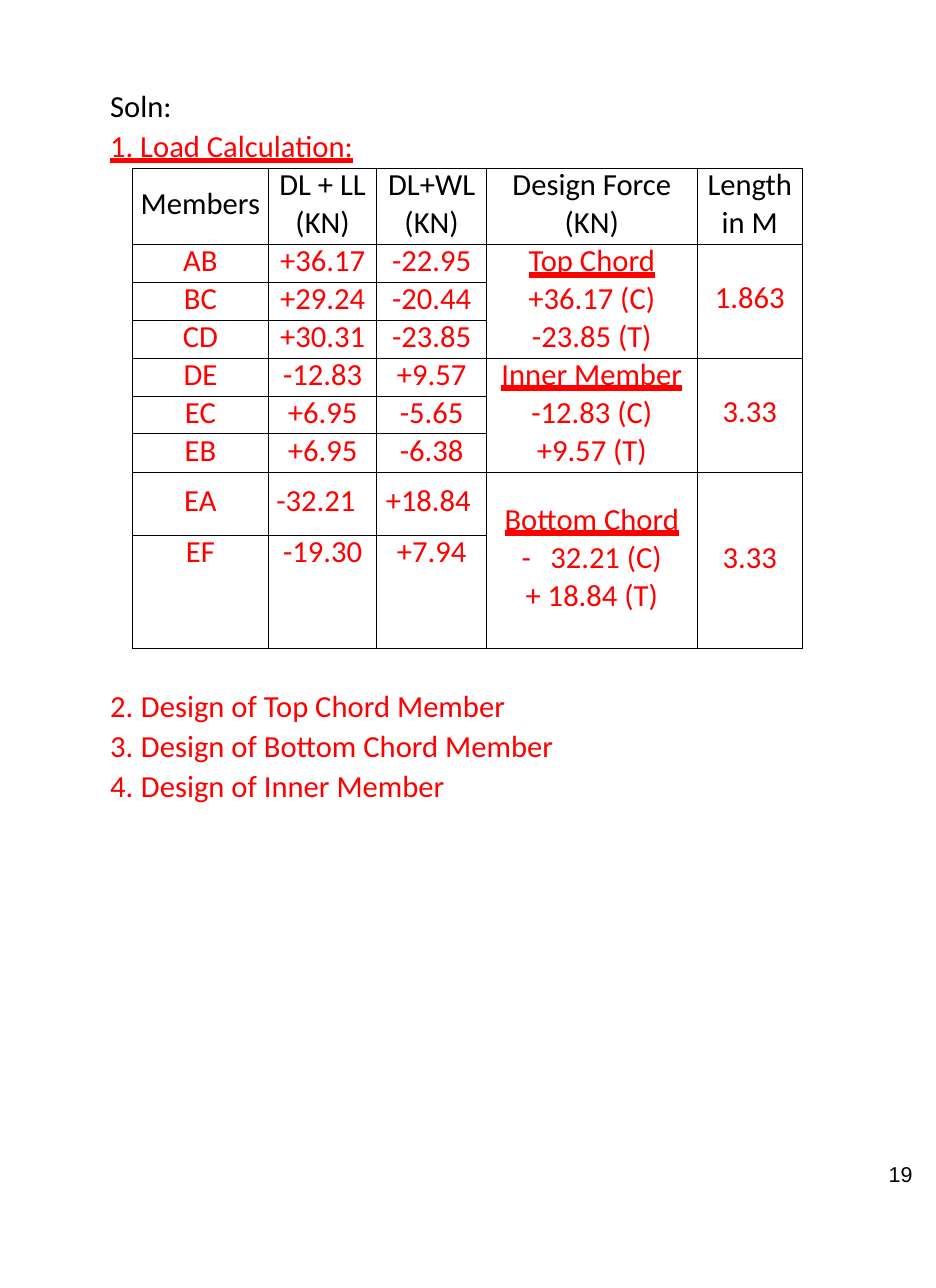
from lxml import etree
from pptx import Presentation
from pptx.dml.color import RGBColor
from pptx.enum.text import MSO_ANCHOR, MSO_AUTO_SIZE, MSO_UNDERLINE, PP_ALIGN
from pptx.oxml.ns import qn
from pptx.util import Inches, Pt

BLACK = RGBColor(0, 0, 0)
RED = RGBColor(255, 0, 0)
HEAVY = MSO_UNDERLINE.HEAVY_LINE
LEFT, CENTER = PP_ALIGN.LEFT, PP_ALIGN.CENTER
TOP, MIDDLE = MSO_ANCHOR.TOP, MSO_ANCHOR.MIDDLE
NO_AUTOFIT = MSO_AUTO_SIZE.NONE

SOLUTION = "Soln:"
LOAD_HEADING = "1. Load Calculation:"
DESIGN_STEPS = [
    "Design of Top Chord Member",
    "Design of Bottom Chord Member",
    "Design of Inner Member",
]
FIRST_STEP = 2
PAGE_NUMBER = "19"

HEADERS = [["Members"], ["DL + LL", "(KN)"], ["DL+WL", "(KN)"],
           ["Design Force", "(KN)"], ["Length", "in M"]]
MEMBERS = [
    ("AB", "+36.17", "-22.95"),
    ("BC", "+29.24", "-20.44"),
    ("CD", "+30.31", "-23.85"),
    ("DE", "-12.83", "+9.57"),
    ("EC", "+6.95", "-5.65"),
    ("EB", "+6.95", "-6.38"),
    ("EA", "-32.21", "+18.84"),
    ("EF", "-19.30", "+7.94"),
]
# first row, last row, design force lines, length, anchor of the forces
GROUPS = [
    (1, 3, ["Top Chord", "+36.17 (C)", "-23.85 (T)"], "1.863", TOP),
    (4, 6, ["Inner Member", "-12.83 (C)", "+9.57 (T)"], "3.33", TOP),
    (7, 8, ["Bottom Chord", "-\t32.21 (C)", "+ 18.84 (T)"], "3.33", MIDDLE),
]
COLUMN_WIDTHS = [1.24, 0.98, 1, 1.91, 0.96]
ROW_HEIGHTS = [0.69, 0.34, 0.35, 0.34, 0.35, 0.34, 0.35, 0.57, 1.03]
EA_ROW = 7


def add_span(para, text, color, size=20, font="Calibri", underline=None):
    span = para.add_run()
    span.text = text
    span.font.name = font
    span.font.size = Pt(size)
    span.font.bold = False
    span.font.color.rgb = color
    span.font.underline = underline


def next_para(frame, index):
    return frame.paragraphs[0] if index == 0 else frame.add_paragraph()


def place(shape, left, top, width, height, inset_top=0.0):
    shape.left, shape.top = Inches(left), Inches(top)
    shape.width, shape.height = Inches(width), Inches(height)
    frame = shape.text_frame
    frame.margin_left = frame.margin_right = frame.margin_bottom = 0
    frame.margin_top = Inches(inset_top)
    frame.vertical_anchor = TOP
    frame.auto_size = NO_AUTOFIT
    frame.word_wrap = True
    return frame


def add_tab_stop(para, inches):
    tabs = etree.SubElement(para._p.get_or_add_pPr(), qn("a:tabLst"))
    etree.SubElement(tabs, qn("a:tab"), pos=str(Inches(inches)), algn="l")


def number_para(para, start):
    props = para._p.get_or_add_pPr()
    props.set("marL", str(Inches(0.29)))
    props.set("indent", str(Inches(-0.28)))
    etree.SubElement(props, qn("a:buAutoNum"), type="arabicPeriod",
                     startAt=str(start))


def style_cell(cell):
    """Clear the fill and insets and draw thin black borders."""
    cell.margin_left = cell.margin_right = 0
    cell.margin_top = cell.margin_bottom = 0
    props = cell._tc.get_or_add_tcPr()
    for side in ("lnL", "lnR", "lnT", "lnB"):
        line = etree.SubElement(props, qn("a:" + side), w=str(Pt(0.5)))
        fill = etree.SubElement(line, qn("a:solidFill"))
        etree.SubElement(fill, qn("a:srgbClr"), val=str(BLACK))
    cell.fill.background()


def fill_cell(cell, lines, color, anchor, underline_first=False):
    cell.vertical_anchor = anchor
    if anchor == MIDDLE:
        cell.margin_bottom = Inches(0.05)
    for index, text in enumerate(lines):
        para = next_para(cell.text_frame, index)
        if "\t" in text:
            add_tab_stop(para, 0.26)
        para.alignment = CENTER
        if index:
            para.space_before = Pt(0.4)
        elif anchor == TOP:
            para.line_spacing = Pt(23.2)
        underline = HEAVY if underline_first and index == 0 else None
        add_span(para, text, color, underline=underline)


def add_load_table(page):
    frame = page.shapes.add_table(
        len(ROW_HEIGHTS), len(COLUMN_WIDTHS), Inches(1.2), Inches(1.53),
        Inches(sum(COLUMN_WIDTHS)), Inches(sum(ROW_HEIGHTS)))
    table = frame.table
    table.first_row = table.horz_banding = False
    for column, width in zip(table.columns, COLUMN_WIDTHS):
        column.width = Inches(width)
    for row, height in zip(table.rows, ROW_HEIGHTS):
        row.height = Inches(height)
    for cell in table.iter_cells():
        style_cell(cell)

    for column, lines in enumerate(HEADERS):
        anchor = MIDDLE if len(lines) == 1 else TOP
        fill_cell(table.cell(0, column), lines, BLACK, anchor)
    for row, values in enumerate(MEMBERS, start=1):
        anchor = MIDDLE if row == EA_ROW else TOP
        for column, value in enumerate(values):
            fill_cell(table.cell(row, column), [value], RED, anchor)
    shifted = table.cell(EA_ROW, 1)
    shifted.margin_left = Inches(0.07)
    shifted.text_frame.paragraphs[0].alignment = LEFT
    table.cell(EA_ROW, 2).margin_right = Inches(0.06)

    for first, last, forces, length, anchor in GROUPS:
        for column in (3, 4):
            table.cell(first, column).merge(table.cell(last, column))
        fill_cell(table.cell(first, 3), forces, RED, anchor, True)
        fill_cell(table.cell(first, 4), [length], RED, MIDDLE)


def main():
    deck = Presentation()
    deck.slide_width = Inches(8.5)
    deck.slide_height = Pt(842)
    page = deck.slides.add_slide(deck.slide_layouts[1])
    title, body = page.placeholders

    frame = place(title, 1, 0.74, 2.24, 0.76, 0.05)
    headings = [(SOLUTION, BLACK, None), (LOAD_HEADING, RED, HEAVY)]
    for index, (text, color, underline) in enumerate(headings):
        para = next_para(frame, index)
        para.alignment = LEFT
        para.space_before = Pt(2 if index else 0)
        add_span(para, text, color, underline=underline)

    add_load_table(page)

    frame = place(body, 0.99, 6.19, 4.06, 1.13, 0.05)
    for index, text in enumerate(DESIGN_STEPS):
        para = next_para(frame, index)
        number_para(para, FIRST_STEP)
        para.space_before = Pt(2 if index else 0)
        add_span(para, text, RED)

    box = page.shapes.add_textbox(0, 0, 0, 0)
    frame = place(box, 8.07, 10.55, 0.26, 0.25)
    frame.paragraphs[0].line_spacing = Pt(16.4)
    add_span(frame.paragraphs[0], PAGE_NUMBER, BLACK, 14, "Arial")

    deck.save("out.pptx")


if __name__ == "__main__":
    main()
